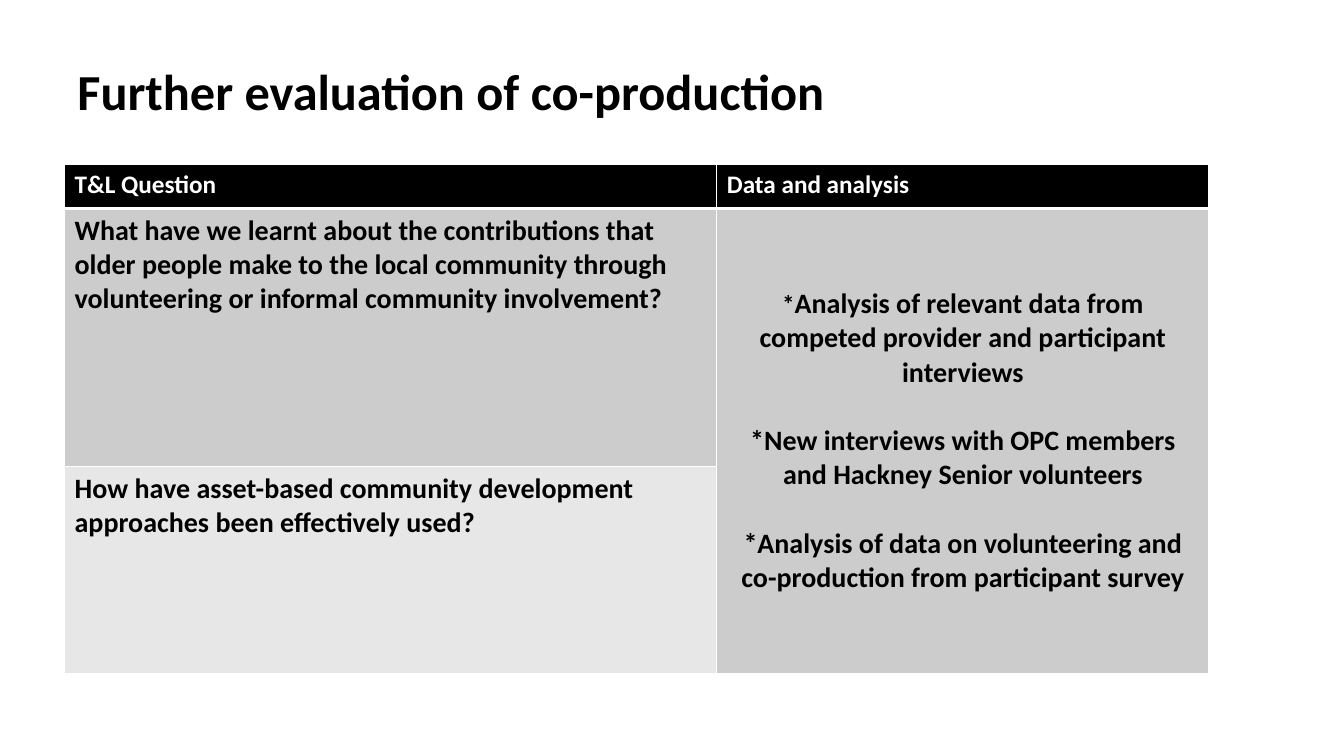
import pptx
import pptx.util
import pptx.dml.color
import pptx.enum.text
import pptx.oxml
import pptx.oxml.ns

RGBColor = pptx.dml.color.RGBColor
Inches = pptx.util.Inches
Pt = pptx.util.Pt
ALIGN = pptx.enum.text.PP_ALIGN
ANCHOR = pptx.enum.text.MSO_ANCHOR

BLACK = RGBColor(0x00, 0x00, 0x00)
WHITE = RGBColor(0xFF, 0xFF, 0xFF)
DARK_BAND = RGBColor(0xCC, 0xCC, 0xCC)
LIGHT_BAND = RGBColor(0xE7, 0xE7, 0xE7)

FONT = "Calibri"
SLIDE_SIZE = (13.33, 7.5)
TITLE = "Further evaluation of co-production"
TITLE_BOX = (0.67, 0.21, 11.77, 1.45)
HEADINGS = ["T&L Question", "Data and analysis"]
QUESTIONS = [
    "What have we learnt about the contributions that older people make to the local community "
    "through volunteering or informal community involvement?",
    "How have asset-based community development approaches been effectively used?",
]
ANALYSES = [
    [("*", 18), ("Analysis of relevant data from competed provider and participant interviews", 20)],
    "*New interviews with OPC members and Hackney Senior volunteers",
    "*Analysis of data on volunteering and co-production from participant survey",
]
TABLE_ORIGIN = (0.64, 1.63)
COLUMN_WIDTHS = [6.47, 4.88]
ROW_HEIGHTS = [0.44, 2.56, 2.05]
ROW_FILLS = [BLACK, DARK_BAND, LIGHT_BAND]


def write_text(frame, paragraphs, size=20, color=BLACK, align=ALIGN.LEFT,
               anchor=ANCHOR.TOP, line_spacing=None, gap=0):
    frame.word_wrap = True
    frame.vertical_anchor = anchor
    for index, content in enumerate(paragraphs):
        paragraph = frame.paragraphs[0] if index == 0 else frame.add_paragraph()
        paragraph.alignment = align
        paragraph.line_spacing = line_spacing
        paragraph.space_before = Pt(gap if index else 0)
        pieces = [(content, size)] if isinstance(content, str) else content
        for text, points in pieces:
            run = paragraph.add_run()
            run.text = text
            run.font.name = FONT
            run.font.size = Pt(points)
            run.font.bold = True
            run.font.color.rgb = color


def set_borders(cell, **widths):
    properties = cell._tc.get_or_add_tcPr()
    namespace = pptx.oxml.ns.nsdecls("a")
    for index, side in enumerate("LRTB"):
        width = Pt(widths.get(side, 1))
        border = pptx.oxml.parse_xml(
            f'<a:ln{side} {namespace} w="{width}"><a:solidFill>'
            f'<a:srgbClr val="{WHITE}"/></a:solidFill></a:ln{side}>')
        properties.insert(index, border)


def add_title(slide):
    box = slide.shapes.add_textbox(*map(Inches, TITLE_BOX))
    write_text(box.text_frame, [TITLE], size=36, anchor=ANCHOR.MIDDLE, line_spacing=0.9)


def add_question_table(slide):
    bounds = (*TABLE_ORIGIN, sum(COLUMN_WIDTHS), sum(ROW_HEIGHTS))
    table = slide.shapes.add_table(
        len(ROW_HEIGHTS), len(COLUMN_WIDTHS), *map(Inches, bounds)).table
    for column, width in zip(table.columns, COLUMN_WIDTHS):
        column.width = Inches(width)
    for row, height, fill in zip(table.rows, ROW_HEIGHTS, ROW_FILLS):
        row.height = Inches(height)
        for cell in row.cells:
            cell.fill.solid()
            cell.fill.fore_color.rgb = fill
    for index, heading in enumerate(HEADINGS):
        write_text(table.cell(0, index).text_frame, [heading], size=18, color=WHITE)
        set_borders(table.cell(0, index), B=3)
        set_borders(table.cell(1, index), T=3)
        set_borders(table.cell(2, index))
    for index, question in enumerate(QUESTIONS, start=1):
        write_text(table.cell(index, 0).text_frame, [question])
    analysis_cell = table.cell(1, 1)
    analysis_cell.merge(table.cell(2, 1))
    write_text(analysis_cell.text_frame, ANALYSES, align=ALIGN.CENTER, gap=24.4)
    analysis_cell.vertical_anchor = ANCHOR.MIDDLE


def main():
    presentation = pptx.Presentation()
    presentation.slide_width, presentation.slide_height = map(Inches, SLIDE_SIZE)
    slide = presentation.slides.add_slide(presentation.slide_layouts[6])
    add_title(slide)
    add_question_table(slide)
    presentation.save("out.pptx")


if __name__ == "__main__":
    main()
